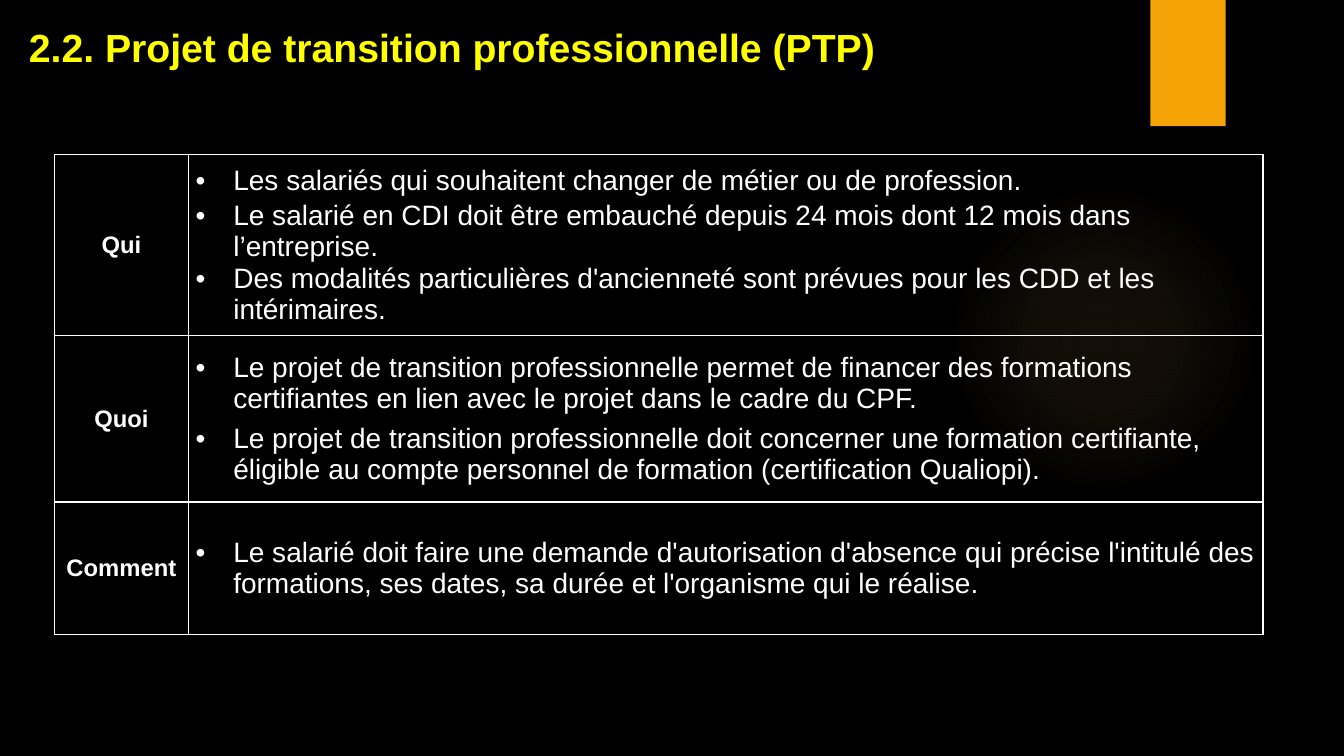
import pptx
import pptx.dml.color
import pptx.enum.shapes
import pptx.enum.text
import pptx.oxml
import pptx.oxml.ns
import pptx.util
from lxml import etree

Cm = pptx.util.Cm
Pt = pptx.util.Pt
RGB = pptx.dml.color.RGBColor.from_string
SHAPE = pptx.enum.shapes.MSO_SHAPE
ALIGN = pptx.enum.text.PP_ALIGN
ANCHOR = pptx.enum.text.MSO_ANCHOR

TITLE = "2.2. Projet de transition professionnelle (PTP)"
SPACED, TIGHT = 3, 0
ROWS = [
    ("Qui", 4.57, [
        ("Les salariés qui souhaitent changer de métier ou de profession.", SPACED),
        ("Le salarié en CDI doit être embauché depuis 24 mois dont 12 mois dans l’entreprise.", TIGHT),
        ("Des modalités particulières d'ancienneté sont prévues pour les CDD et les intérimaires.", TIGHT),
    ]),
    ("Quoi", 4.19, [
        ("Le projet de transition professionnelle permet de financer des formations "
         "certifiantes en lien avec le projet dans le cadre du CPF.", SPACED),
        ("Le projet de transition professionnelle doit concerner une formation certifiante, "
         "éligible au compte personnel de formation (certification Qualiopi).", SPACED),
    ]),
    ("Comment", 3.33, [
        ("Le salarié doit faire une demande d'autorisation d'absence qui précise l'intitulé "
         "des formations, ses dates, sa durée et l'organisme qui le réalise.", SPACED),
    ]),
]
COLUMN_WIDTHS = (3.38, 27.08)
GLOW_STOPS = [(0, 7), (36, 6), (69, 0)]
THEME = {
    "background": "000000", "glow": "FAC96A", "tab": "F5A408", "border": "FFFFFF",
    "title": {"name": "Arial", "size": Pt(28), "bold": True, "color": "FFFF00"},
    "label": {"name": "Arial", "size": Pt(17), "bold": True, "color": "FFFFFF"},
    "body": {"name": "Arial", "size": Pt(20), "bold": False, "color": "FFFFFF"},
}
CELL_FORMAT = {
    "vertical_anchor": ANCHOR.MIDDLE, "margin_left": Cm(0.18), "margin_right": Cm(0.18),
    "margin_top": 0, "margin_bottom": 0,
}
NAMESPACE = pptx.oxml.ns.nsdecls("a")


def apply_format(target, values):
    for name, value in values.items():
        setattr(target, name, value)


def write(para, text, style):
    span = para.add_run()
    span.text = text
    apply_format(span.font, {key: value for key, value in style.items() if key != "color"})
    span.font.color.rgb = RGB(style["color"])


def add_decoration(slide, kind, left, top, width, height, color):
    shape = slide.shapes.add_shape(kind, Cm(left), Cm(top), Cm(width), Cm(height))
    shape.shadow.inherit = False
    shape.fill.solid()
    shape.fill.fore_color.rgb = RGB(color)
    shape.line.fill.background()
    return shape


def fade(shape):
    stops = "".join(
        f'<a:gs pos="{place * 1000}"><a:srgbClr val="{THEME["glow"]}">'
        f'<a:alpha val="{alpha * 1000}"/></a:srgbClr></a:gs>'
        for place, alpha in GLOW_STOPS)
    gradient = pptx.oxml.parse_xml(
        f'<a:gradFill {NAMESPACE} rotWithShape="1"><a:gsLst>{stops}</a:gsLst><a:path path="circle">'
        '<a:fillToRect l="50000" t="50000" r="50000" b="50000"/></a:path></a:gradFill>')
    properties = shape.element.spPr
    properties.replace(properties.find(pptx.oxml.ns.qn("a:solidFill")), gradient)


def format_cell(cell):
    apply_format(cell, CELL_FORMAT)
    properties = cell._tc.get_or_add_tcPr()
    for side in "LRTB":
        properties.append(pptx.oxml.parse_xml(
            f'<a:ln{side} {NAMESPACE} w="{Pt(1)}"><a:solidFill>'
            f'<a:srgbClr val="{THEME["border"]}"/></a:solidFill></a:ln{side}>'))
    cell.fill.background()


def add_bullet(para):
    properties = para._p.get_or_add_pPr()
    properties.set("marL", str(Cm(0.95)))
    properties.set("indent", str(-Cm(0.95)))
    for tag, name, value in (("buFont", "typeface", "Arial"), ("buChar", "char", "•")):
        etree.SubElement(properties, pptx.oxml.ns.qn(f"a:{tag}")).set(name, value)


def add_title(slide):
    box = slide.shapes.add_textbox(Cm(0.48), Cm(0.46), Cm(22.1), Cm(1.45))
    apply_format(box.text_frame, {
        "word_wrap": False, "auto_size": pptx.enum.text.MSO_AUTO_SIZE.SHAPE_TO_FIT_TEXT})
    para = box.text_frame.paragraphs[0]
    apply_format(para, {"alignment": ALIGN.JUSTIFY, "space_after": Pt(6)})
    write(para, TITLE, THEME["title"])


def add_grid(slide):
    height = sum(row[1] for row in ROWS)
    table = slide.shapes.add_table(
        len(ROWS), len(COLUMN_WIDTHS), Cm(1.37), Cm(3.89), Cm(sum(COLUMN_WIDTHS)), Cm(height)).table
    apply_format(table, {"first_row": False, "horz_banding": False})
    for column, width in zip(table.columns, COLUMN_WIDTHS):
        column.width = Cm(width)
    for row, (label, row_height, points) in zip(table.rows, ROWS):
        row.height = Cm(row_height)
        label_cell, body_cell = row.cells
        for cell in row.cells:
            format_cell(cell)
        para = label_cell.text_frame.paragraphs[0]
        para.alignment = ALIGN.CENTER
        write(para, label, THEME["label"])
        frame = body_cell.text_frame
        for index, (text, gap) in enumerate(points):
            para = frame.add_paragraph() if index else frame.paragraphs[0]
            add_bullet(para)
            apply_format(para, {"space_before": Pt(gap if index else 0), "space_after": Pt(gap)})
            write(para, text, THEME["body"])


def main():
    deck = pptx.Presentation()
    apply_format(deck, {"slide_width": Cm(33.87), "slide_height": Cm(19.05)})
    slide = deck.slides.add_slide(deck.slide_layouts[6])
    slide.background.fill.solid()
    slide.background.fill.fore_color.rgb = RGB(THEME["background"])
    fade(add_decoration(slide, SHAPE.OVAL, 23.9, 4.65, 7.82, 7.82, THEME["glow"]))
    add_decoration(slide, SHAPE.RECTANGLE, 28.99, 0, 1.9, 3.18, THEME["tab"])
    add_title(slide)
    add_grid(slide)
    deck.save("out.pptx")


if __name__ == "__main__":
    main()
